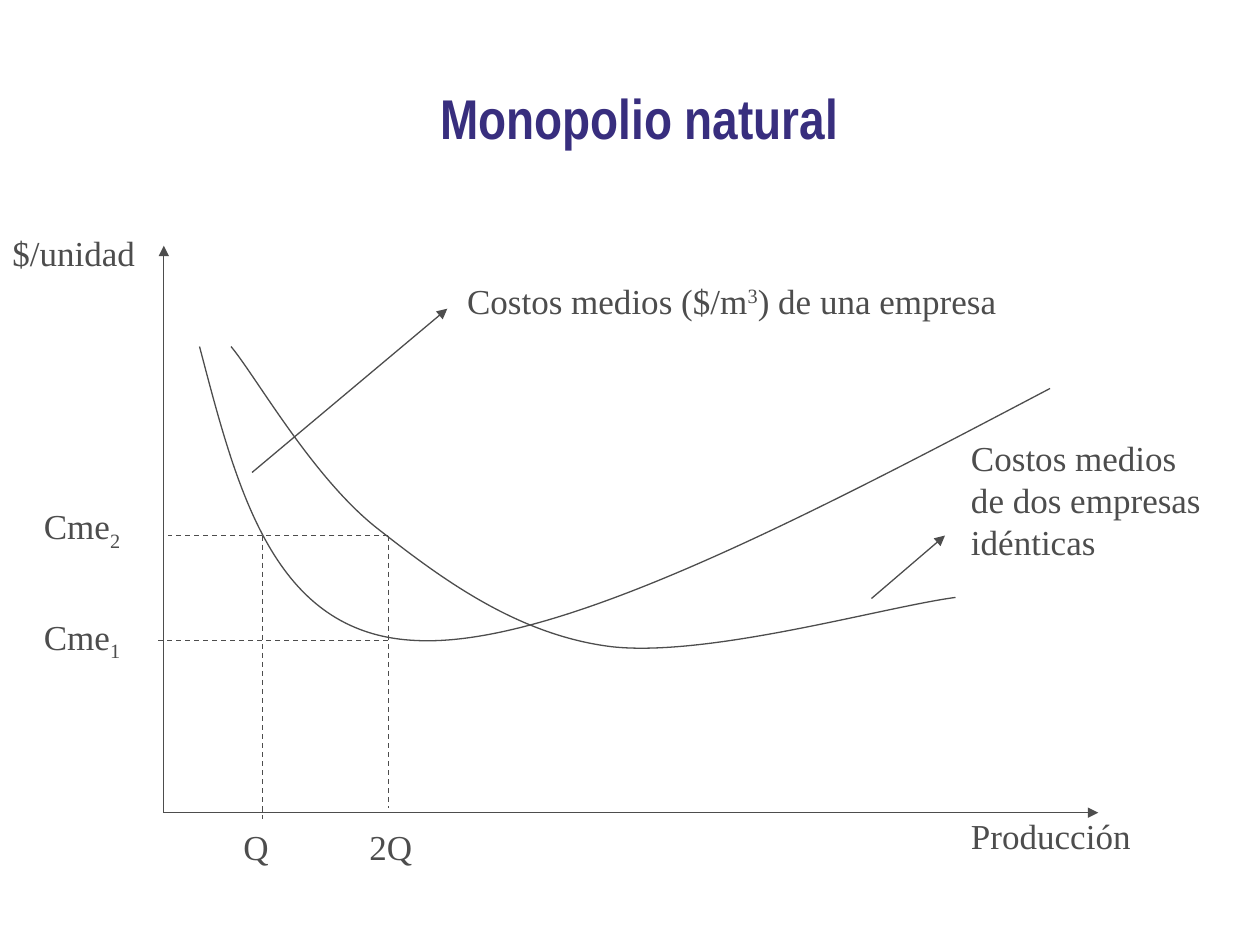
from lxml.etree import SubElement
from pptx import Presentation
from pptx.dml.color import RGBColor
from pptx.enum.dml import MSO_LINE
from pptx.enum.shapes import MSO_CONNECTOR
from pptx.enum.text import MSO_ANCHOR, MSO_AUTO_SIZE, PP_ALIGN
from pptx.oxml.ns import qn
from pptx.util import Inches, Pt

INK = "4D4D4D"
TITLE_COLOR = "382E7E"
CELL = Inches(1) / 12  # the slide is a grid of 120 columns by 90 rows
LINE_HEIGHT, PADDING = 4, 1.28  # rows per text line, rows of box padding
SUPERSCRIPT, SUBSCRIPT = 30000, -25000


def cells(count):
    return round(count * CELL)


def color(hex_string):
    return RGBColor.from_string(hex_string)


def style_line(line):
    line.color.rgb = color(INK)
    line.width = Pt(0.75)


def add_run(paragraph, text, font_name, size, hex_color, bold=False, baseline=0):
    run = paragraph.add_run()
    run.text = text
    run.font.name = font_name
    run.font.size = Pt(size)
    run.font.bold = bold
    run.font.color.rgb = color(hex_color)
    if baseline:
        run._r.get_or_add_rPr().set("baseline", str(baseline))


def add_title(slide, box, text):
    title = slide.shapes.title
    title.left, title.top, title.width, title.height = map(cells, box)
    frame = title.text_frame
    frame.vertical_anchor = MSO_ANCHOR.MIDDLE
    paragraph = frame.paragraphs[0]
    paragraph.alignment = PP_ALIGN.CENTER
    add_run(paragraph, text, "Arial Narrow", 32, TITLE_COLOR, bold=True)


def add_label(slide, left, top, width, lines):
    """Each line is a list of (text, baseline) runs."""
    height = PADDING + LINE_HEIGHT * len(lines)
    label = slide.shapes.add_textbox(*map(cells, (left, top, width, height)))
    frame = label.text_frame
    frame.word_wrap = False
    frame.auto_size = MSO_AUTO_SIZE.SHAPE_TO_FIT_TEXT
    for index, runs in enumerate(lines):
        paragraph = frame.add_paragraph() if index else frame.paragraphs[0]
        for text, baseline in runs:
            add_run(paragraph, text, "Times New Roman", 20, INK, baseline=baseline)


def add_line(slide, start, end, arrow=False, dashed=False):
    connector = slide.shapes.add_connector(
        MSO_CONNECTOR.STRAIGHT, *map(cells, (*start, *end)))
    style_line(connector.line)
    if dashed:
        connector.line.dash_style = MSO_LINE.DASH
    if arrow:
        SubElement(connector.line._get_or_add_ln(), qn("a:tailEnd"), type="triangle")
    SubElement(connector._element.spPr, qn("a:effectLst"))


def add_curve(slide, points):
    """Bézier curve: a start, then two control points and an end per segment."""
    start, *rest = [tuple(map(cells, point)) for point in points]
    builder = slide.shapes.build_freeform(*start)
    builder.add_line_segments(rest, close=False)
    curve = builder.convert_to_shape()
    curve.shadow.inherit = False
    curve.fill.background()
    style_line(curve.line)

    outline = next(curve._element.iter(qn("a:path")))
    steps = outline.findall(qn("a:lnTo"))
    for first in range(0, len(steps), 3):
        bezier = SubElement(outline, qn("a:cubicBezTo"))
        for step in steps[first:first + 3]:
            bezier.append(step[0])
            outline.remove(step)


def add_cost_diagram(slide, left, top):
    def at(column, row):
        return left + column, top + row

    origin = at(15.6, 56.4)
    for axis_end in (at(15.6, 2.4), at(104.6, 56.4)):
        add_line(slide, origin, axis_end, arrow=True)

    one_firm = [(19, 12), (22.6, 25.7), (26, 39.4), (39.6, 40),
                (53, 40.7), (76.6, 28.3), (100, 16)]
    two_firms = [(22, 12), (24.4, 14.9), (29.8, 24.5), (35.9, 29.3),
                 (41.9, 34), (49.2, 39.5), (58.3, 40.6),
                 (67.6, 41.6), (84.2, 36.8), (91, 35.9)]
    for cost_curve in (one_firm, two_firms):
        add_curve(slide, [at(*point) for point in cost_curve])

    for curve_point, label_point in (((24, 24), (42.6, 8.4)), ((83, 36), (90, 30))):
        add_line(slide, at(*curve_point), at(*label_point), arrow=True)

    q, double_q, cme_1, cme_2 = 25, 37, 40, 30
    guides = [((double_q, cme_2), (double_q, 56)), ((double_q, cme_1), (15, cme_1)),
              ((double_q, cme_2), (16, cme_2)), ((q, cme_2), (q, 57))]
    for start, end in guides:
        add_line(slide, at(*start), at(*end), dashed=True)

    labels = [
        (0, 0.5, 14.2, [[("$/unidad", 0)]]),
        (91.3, 56, 17.8, [[("Producción", 0)]]),
        (43.3, 5, 53.6, [[("Costos medios ($/m", 0), ("3", SUPERSCRIPT),
                          (") de una empresa", 0)]]),
        (91.3, 20, 24.5, [[("Costos medios", 0)], [("de dos empresas", 0)],
                          [("idénticas", 0)]]),
        (34, 57, 6.6, [[("2Q", 0)]]),
        (3, 37, 9.8, [[("Cme", 0), ("1", SUBSCRIPT)]]),
        (3, 26.5, 9.8, [[("Cme", 0), ("2", SUBSCRIPT)]]),
        (22, 57, 4.8, [[("Q", 0)]]),
    ]
    for column, row, width, lines in labels:
        add_label(slide, *at(column, row), width, lines)


def main():
    deck = Presentation()
    deck.slide_width, deck.slide_height = cells(120), cells(90)
    slide = deck.slides.add_slide(deck.slide_layouts[5])
    add_title(slide, (4.2, 6.2, 113.4, 10), "Monopolio natural")
    add_cost_diagram(slide, left=0, top=21)
    deck.save("out.pptx")


if __name__ == "__main__":
    main()
